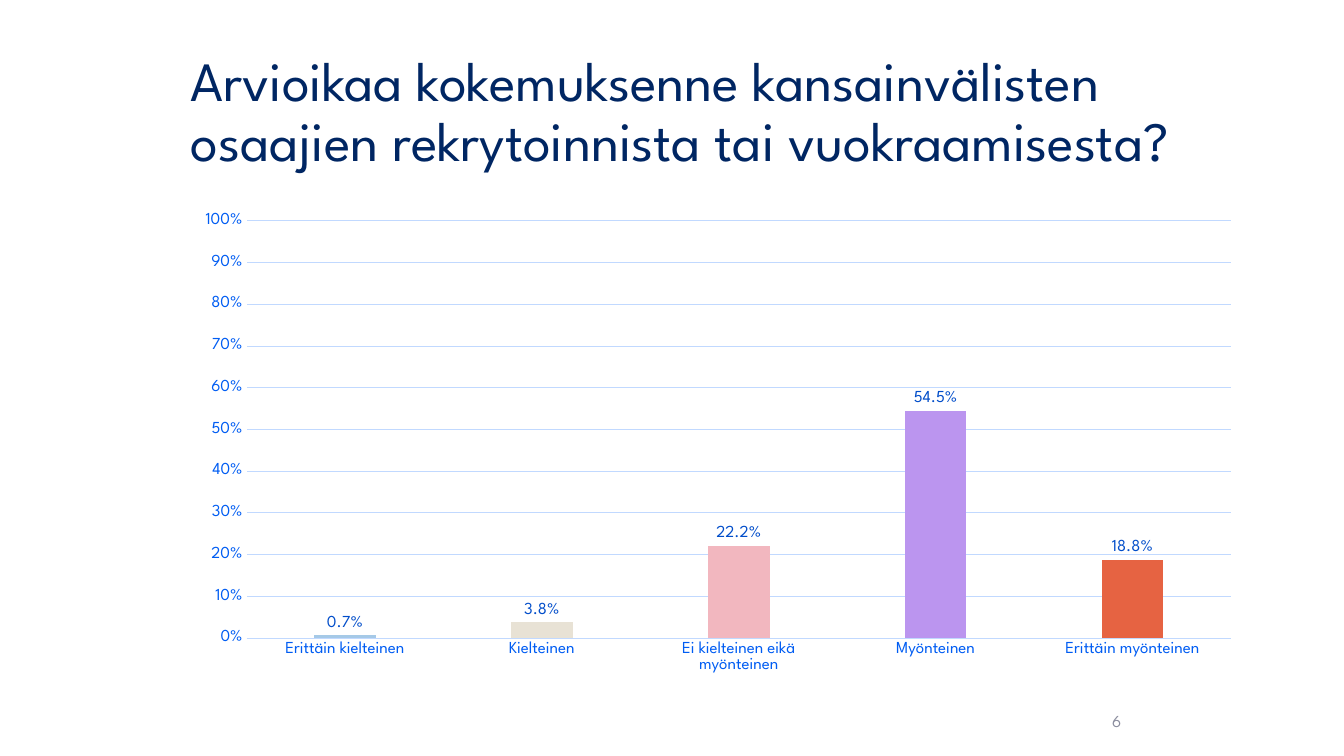
import pptx
import pptx.chart.data
import pptx.dml.color
import pptx.enum.chart
import pptx.enum.text
import pptx.oxml
import pptx.oxml.ns
import pptx.util
from dataclasses import dataclass
from pptx.util import Inches

QUESTION = "Arvioikaa kokemuksenne kansainvälisten osaajien rekrytoinnista tai vuokraamisesta?"
PAGE_NUMBER = "6"
# answer, share, bar colour
ANSWERS = [
    ("Erittäin kielteinen", 0.007, "A5C9E7"),
    ("Kielteinen", 0.038, "E8E2D5"),
    ("Ei kielteinen eikä myönteinen", 0.222, "F2B7BF"),
    ("Myönteinen", 0.545, "BB95EF"),
    ("Erittäin myönteinen", 0.188, "E66342"),
]

# left, top, width, height in inches
TITLE_BOX = (1.79, 0.4, 10.94, 1.45)
CHART_BOX = (1.82, 2.02, 10.59, 4.76)
PLOT_BOX = (2.44, 2.19, 9.76, 4.14)
NUMBER_BOX = (9.42, 6.95, 1.8, 0.4)


@dataclass(frozen=True)
class Theme:
    font: str = "League Spartan"
    title: str = "002663"
    axis: str = "005DF3"
    label: str = "004DCA"
    grid: str = "C1D9FF"
    number: str = "8C8E9F"
    title_size: float = 39.6
    small_size: float = 12
    line_width: float = 0.75


THEME = Theme()


def rgb(colour):
    return pptx.dml.color.RGBColor.from_string(colour)


def style_font(font, size, colour):
    font.name = THEME.font
    font.size = pptx.util.Pt(size)
    font.bold = False
    font.color.rgb = rgb(colour)


def style_line(line):
    line.color.rgb = rgb(THEME.grid)
    line.width = pptx.util.Pt(THEME.line_width)


def add_title(slide):
    title = slide.shapes.title
    title.left, title.top, title.width, title.height = map(Inches, TITLE_BOX)
    frame = title.text_frame
    frame.word_wrap = True
    frame.auto_size = pptx.enum.text.MSO_AUTO_SIZE.NONE
    frame.vertical_anchor = pptx.enum.text.MSO_ANCHOR.MIDDLE
    paragraph = frame.paragraphs[0]
    paragraph.alignment = pptx.enum.text.PP_ALIGN.LEFT
    paragraph.line_spacing = 0.9
    run = paragraph.add_run()
    run.text = QUESTION
    style_font(run.font, THEME.title_size, THEME.title)


def add_page_number(slide):
    frame = slide.shapes.add_textbox(*map(Inches, NUMBER_BOX)).text_frame
    frame.word_wrap = True
    frame.vertical_anchor = pptx.enum.text.MSO_ANCHOR.MIDDLE
    paragraph = frame.paragraphs[0]
    paragraph.alignment = pptx.enum.text.PP_ALIGN.RIGHT
    run = paragraph.add_run()
    run.text = PAGE_NUMBER
    style_font(run.font, THEME.small_size, THEME.number)


def fix_plot_area(chart):
    """Place the inner plot area at PLOT_BOX, as fractions of the chart."""
    left, top, width, height = CHART_BOX
    plot_left, plot_top, plot_width, plot_height = PLOT_BOX
    fractions = {
        "x": (plot_left - left) / width,
        "y": (plot_top - top) / height,
        "w": plot_width / width,
        "h": plot_height / height,
    }
    settings = [("layoutTarget", "inner"), ("xMode", "edge"), ("yMode", "edge")]
    settings += [(side, f"{value:.3f}") for side, value in fractions.items()]
    inner = "".join(f'<c:{tag} val="{value}"/>' for tag, value in settings)
    layout = pptx.oxml.parse_xml(
        f'<c:layout {pptx.oxml.ns.nsdecls("c")}>'
        f"<c:manualLayout>{inner}</c:manualLayout></c:layout>"
    )
    plot_area = chart.element.chart.plotArea
    for old in plot_area.findall(pptx.oxml.ns.qn("c:layout")):
        plot_area.remove(old)
    plot_area.insert(0, layout)


def style_axes(chart):
    for axis in (chart.category_axis, chart.value_axis):
        axis.major_tick_mark = pptx.enum.chart.XL_TICK_MARK.NONE
        axis.minor_tick_mark = pptx.enum.chart.XL_TICK_MARK.NONE
        style_font(axis.tick_labels.font, THEME.small_size, THEME.axis)
    style_line(chart.category_axis.format.line)

    shares = chart.value_axis
    shares.minimum_scale, shares.maximum_scale, shares.major_unit = 0, 1, 0.1
    shares.tick_labels.number_format = "0%"
    shares.tick_labels.number_format_is_linked = False
    shares.format.line.fill.background()
    shares.has_major_gridlines = True
    style_line(shares.major_gridlines.format.line)


def add_answer_chart(slide):
    data = pptx.chart.data.CategoryChartData()
    data.categories = [answer for answer, _, _ in ANSWERS]
    data.add_series("Series 1", [share for _, share, _ in ANSWERS])
    chart = slide.shapes.add_chart(
        pptx.enum.chart.XL_CHART_TYPE.COLUMN_CLUSTERED, *map(Inches, CHART_BOX), data
    ).chart
    chart.has_legend = False
    chart.has_title = False
    style_font(chart.font, 10, THEME.title)
    style_axes(chart)
    fix_plot_area(chart)

    bars = chart.plots[0]
    bars.vary_by_categories = False
    bars.gap_width = 219
    bars.overlap = -27
    for index, (_, _, colour) in enumerate(ANSWERS):
        fill = bars.series[0].points[index].format.fill
        fill.solid()
        fill.fore_color.rgb = rgb(colour)

    labels = bars.series[0].data_labels
    labels.show_value = True
    labels.number_format = "0.0%"
    labels.number_format_is_linked = False
    labels.position = pptx.enum.chart.XL_LABEL_POSITION.OUTSIDE_END
    style_font(labels.font, THEME.small_size, THEME.label)


def main():
    deck = pptx.Presentation()
    deck.slide_width, deck.slide_height = Inches(13.33), Inches(7.5)
    slide = deck.slides.add_slide(deck.slide_layouts.get_by_name("Title Only"))
    add_title(slide)
    add_page_number(slide)
    add_answer_chart(slide)
    deck.save("out.pptx")


if __name__ == "__main__":
    main()
